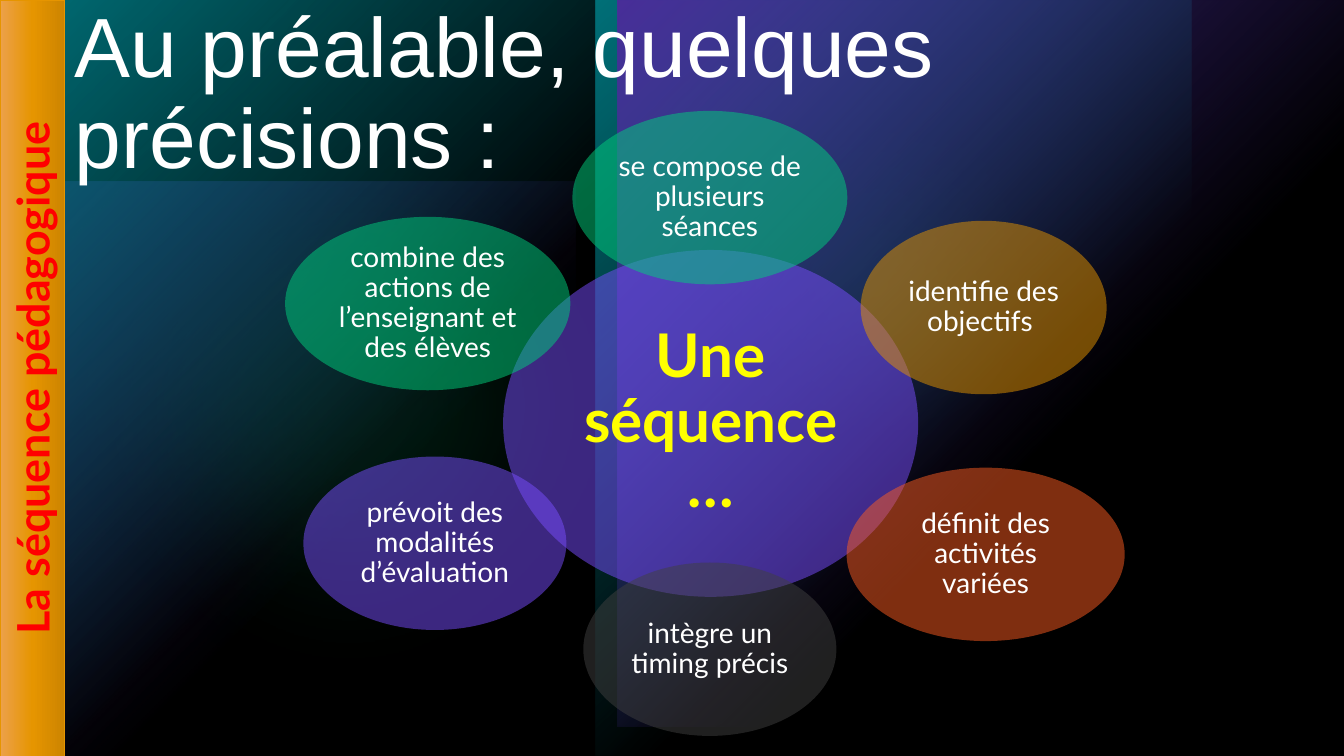
import dataclasses

import pptx
import pptx.dml.color
import pptx.enum.shapes
import pptx.enum.text
import pptx.oxml
import pptx.oxml.ns
import pptx.util

Cm = pptx.util.Cm
Pt = pptx.util.Pt
RGBColor = pptx.dml.color.RGBColor
qn = pptx.oxml.ns.qn
MSO_SHAPE = pptx.enum.shapes.MSO_SHAPE
MSO_ANCHOR = pptx.enum.text.MSO_ANCHOR
PP_ALIGN = pptx.enum.text.PP_ALIGN
MSO_AUTO_SIZE = pptx.enum.text.MSO_AUTO_SIZE


@dataclasses.dataclass(frozen=True)
class Theme:
    black: str = "000000"
    white: str = "FFFFFF"
    yellow: str = "FFFF00"
    red: str = "FF0000"
    purple: str = "794DFF"
    green: str = "00D17D"
    teal: str = "00BAC8"
    amber: str = "E69500"
    light_amber: str = "ECA14B"
    dark_amber: str = "CC8400"
    orange: str = "FE5D21"
    grey: str = "404040"
    title_font: str = "Arial"
    body_font: str = "Lato"
    title_size: int = 60
    hub_size: int = 43
    sidebar_size: int = 32
    petal_size: int = 20


theme = Theme()
NAMESPACE = pptx.oxml.ns.nsdecls("a")
FROM_TOP_LEFT = '<a:path path="circle"><a:fillToRect r="100000" b="100000"/></a:path>'
DOWNWARD = '<a:lin ang="5400000" scaled="0"/>'

presentation = pptx.Presentation()
presentation.slide_width = Cm(33.87)
presentation.slide_height = Cm(19.05)
slide = presentation.slides.add_slide(presentation.slide_layouts[5])
slide.background.fill.solid()
slide.background.fill.fore_color.rgb = RGBColor.from_string(theme.black)


def add_filled_shape(kind, box, stops, direction=FROM_TOP_LEFT):
    """Add an outline-free shape; stops are (position, colour, opacity), a single one being solid."""
    shape = slide.shapes.add_shape(kind, *[Cm(length) for length in box])
    shape.shadow.inherit = False
    shape.line.fill.background()
    colors = [
        f'<a:srgbClr val="{color}"><a:alpha val="{opacity * 1000}"/></a:srgbClr>'
        for _, color, opacity in stops
    ]
    if len(stops) == 1:
        fill = f"<a:solidFill {NAMESPACE}>{colors[0]}</a:solidFill>"
    else:
        marks = "".join(
            f'<a:gs pos="{stop[0] * 1000}">{color}</a:gs>' for stop, color in zip(stops, colors)
        )
        fill = f'<a:gradFill {NAMESPACE} rotWithShape="1"><a:gsLst>{marks}</a:gsLst>{direction}</a:gradFill>'
    shape.fill.background()
    properties = shape.element.spPr
    properties.replace(properties.find(qn("a:noFill")), pptx.oxml.parse_xml(fill))
    return shape


def write_text(shape, text, font, size, color, bold=False, alignment=PP_ALIGN.CENTER, spacing=0.9):
    shape.text_frame.text = text
    shape.text_frame.word_wrap = True
    paragraph = shape.text_frame.paragraphs[0]
    paragraph.alignment = alignment
    paragraph.line_spacing = spacing
    run_font = paragraph.runs[0].font
    run_font.name = font
    run_font.size = Pt(size)
    run_font.bold = bold
    run_font.color.rgb = RGBColor.from_string(color)


# Backdrop of glows under a dark veil
add_filled_shape(MSO_SHAPE.RECTANGLE, (0, 4.57, 14.5, 14.5),
                 [(0, theme.purple, 60), (60, theme.purple, 0)])

for left, top, diameter, opacity in [(15.98, 1.09, 12, 60), (0, 1.42, 17.63, 20)]:
    glow = add_filled_shape(MSO_SHAPE.OVAL, (left, top, diameter, diameter),
                            [(0, theme.green, opacity)])
    soft_edge = pptx.oxml.parse_xml(f'<a:softEdge {NAMESPACE} rad="{Pt(100)}"/>')
    glow.element.spPr.find(qn("a:effectLst")).append(soft_edge)

for box, color in [
    ((0, 0, 15.01, 19.05), theme.teal),
    ((15.01, 0, 15.01, 19.05), theme.teal),
    ((15.57, 0, 18.31, 18.31), theme.purple),
]:
    add_filled_shape(MSO_SHAPE.RECTANGLE, box, [(0, color, 100), (60, color, 0)])

add_filled_shape(MSO_SHAPE.RECTANGLE, (0, 0, 33.87, 19.05), [(0, theme.black, 40)])

# Title, raised above the backdrop
title = slide.shapes.title
title.left, title.top, title.width, title.height = Cm(1.63), Cm(0), Cm(30.84), Cm(2.79)
write_text(title, "Au préalable, quelques précisions :", theme.title_font,
           theme.title_size, theme.white, alignment=PP_ALIGN.LEFT)
title.text_frame.auto_size = MSO_AUTO_SIZE.NONE
title.text_frame.vertical_anchor = MSO_ANCHOR.TOP
slide.shapes.element.append(title.element)

# Vertical sidebar
sidebar = add_filled_shape(
    MSO_SHAPE.RECTANGLE, (-8.71, 8.71, 19.05, 1.63),
    [(0, theme.light_amber, 100), (50, theme.amber, 100), (100, theme.dark_amber, 100)],
    DOWNWARD,
)
sidebar.rotation = 270
sidebar.line.color.rgb = RGBColor.from_string(theme.amber)
sidebar.line.width = Pt(0.5)
write_text(sidebar, "La séquence pédagogique", theme.body_font, theme.sidebar_size,
           theme.red, bold=True, spacing=1.0)
sidebar.text_frame.vertical_anchor = MSO_ANCHOR.TOP
sidebar.text_frame.auto_size = MSO_AUTO_SIZE.SHAPE_TO_FIT_TEXT

# Hub and its petals: text, centre, width, height, colour
PETAL_HEIGHT = 4.37
ovals = [
    ("Une séquence …", 17.91, 10.67, 10.46, 8.74, theme.purple),
    ("se compose de plusieurs séances", 17.89, 4.98, 6.93, PETAL_HEIGHT, theme.green),
    ("identifie des objectifs ", 24.79, 7.75, 6.2, PETAL_HEIGHT, theme.amber),
    ("définit des activités variées", 24.84, 13.97, 7.01, PETAL_HEIGHT, theme.orange),
    ("intègre un timing précis", 17.89, 16.36, 6.38, PETAL_HEIGHT, theme.grey),
    ("prévoit des modalités d’évaluation", 10.96, 13.69, 6.63, PETAL_HEIGHT, theme.purple),
    ("combine des actions de l’enseignant et des élèves", 10.78, 7.65, 7.19, PETAL_HEIGHT,
     theme.green),
]
for index, (text, center_x, center_y, width, height, color) in enumerate(ovals):
    is_hub = index == 0
    oval = add_filled_shape(
        MSO_SHAPE.OVAL,
        (center_x - width / 2, center_y - height / 2, width, height),
        [(0, color, 50)],
    )
    write_text(oval, text, theme.body_font,
               theme.hub_size if is_hub else theme.petal_size,
               theme.yellow if is_hub else theme.white, bold=is_hub)
    frame = oval.text_frame
    frame.vertical_anchor = MSO_ANCHOR.MIDDLE
    inset = Cm(0.15 if is_hub else 0.08)
    frame.margin_left = frame.margin_right = frame.margin_top = frame.margin_bottom = inset

presentation.save("out.pptx")
